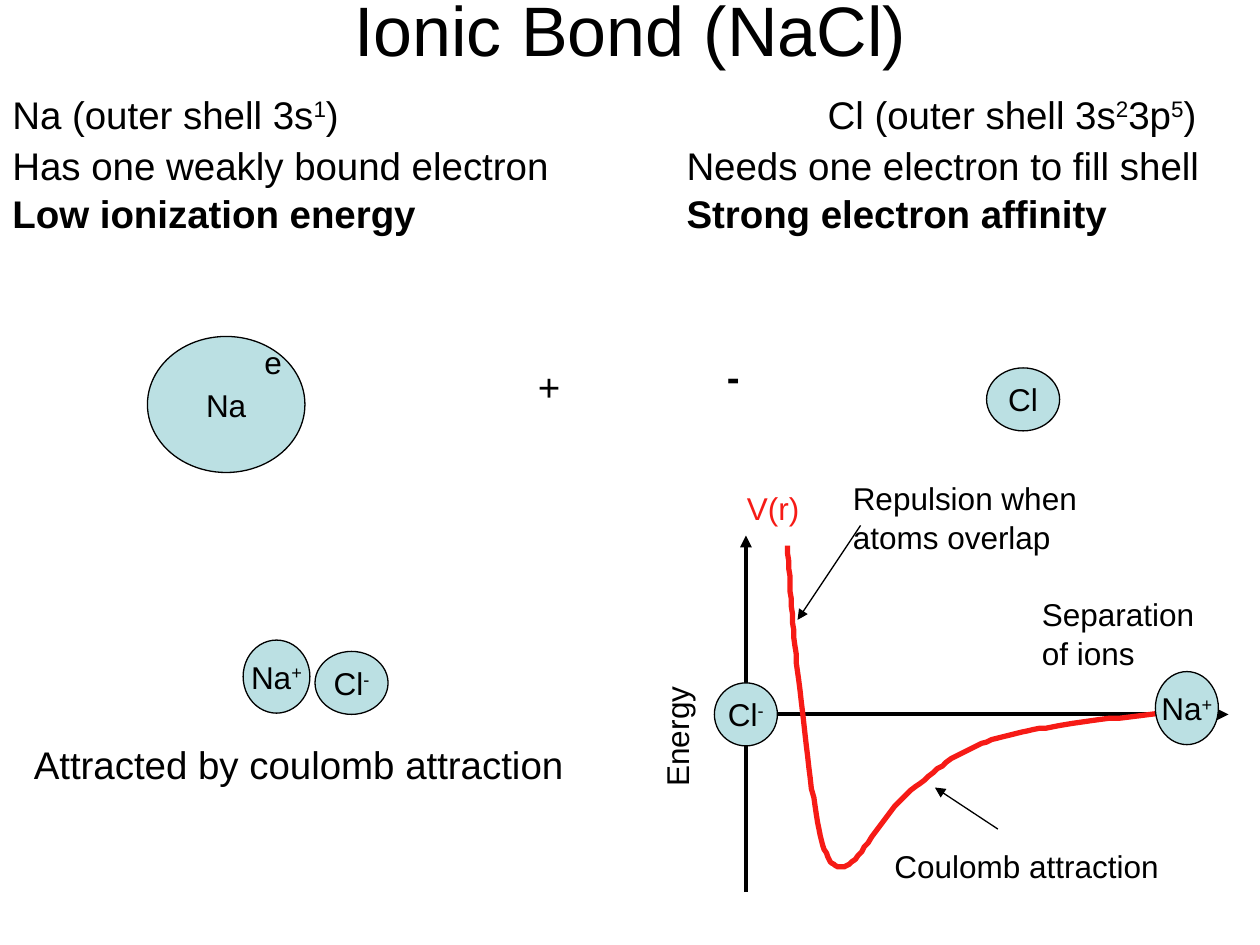
from lxml import etree
from pptx import Presentation
from pptx.dml.color import RGBColor
from pptx.enum.shapes import MSO_CONNECTOR, MSO_SHAPE
from pptx.enum.text import MSO_ANCHOR, PP_ALIGN
from pptx.oxml.ns import qn
from pptx.util import Pt

PX = 9144  # EMU per px, 100 px to the inch
STRAIGHT = MSO_CONNECTOR.STRAIGHT
OVAL = MSO_SHAPE.OVAL
LEFT, CENTER = PP_ALIGN.LEFT, PP_ALIGN.CENTER
TOP, MIDDLE = MSO_ANCHOR.TOP, MSO_ANCHOR.MIDDLE

COLORS = {"ink": "000000", "atom": "BBE0E3", "potential": "F61B16"}
RGB = {name: RGBColor.from_string(value) for name, value in COLORS.items()}
BOLD = {"Low ionization energy", "Strong electron affinity", "-"}

prs = Presentation()
prs.slide_width, prs.slide_height = 1000 * PX, 750 * PX
slide = prs.slides.add_slide(prs.slide_layouts[6])
shapes = slide.shapes


def write(frame, lines, size, color="ink", align=LEFT, anchor=TOP, wrap=True):
    """Write one paragraph per line; parts between ^ marks are superscript."""
    frame.word_wrap = wrap
    frame.vertical_anchor = anchor
    for i, line in enumerate(lines):
        paragraph = frame.paragraphs[0] if i == 0 else frame.add_paragraph()
        paragraph.alignment = align
        if i < len(lines) - 1:
            paragraph.space_after = Pt(1)
        for part, text in enumerate(line.split("^")):
            if not text:
                continue
            run = paragraph.add_run()
            run.text = text
            font_format = {"name": "Arial", "size": Pt(size), "bold": line in BOLD}
            for attribute, value in font_format.items():
                setattr(run.font, attribute, value)
            run.font.color.rgb = RGB[color]
            if part % 2:
                run._r.get_or_add_rPr().set("baseline", "30000")


def bezier(p0, p1, p2, p3, t):
    """Return the point at t on a cubic curve."""
    u = 1 - t
    return tuple(u**3 * a + 3 * u * u * t * b + 3 * u * t * t * c + t**3 * d
                 for a, b, c, d in zip(p0, p1, p2, p3))


title = shapes.add_textbox(50 * PX, 0, 900 * PX, 45 * PX)
write(title.text_frame, ["Ionic Bond (NaCl)"], 40, align=CENTER, anchor=MIDDLE)

# Axes and pointers, each with its arrowhead at the end
ARROWS = [
    ((592, 708), (592, 425), 2.25),
    ((583, 567), (975, 567), 2.25),
    ((792, 658), (742, 625), 0.75),
    ((683, 417), (633, 492), 0.75),
]
for (x1, y1), (x2, y2), width in ARROWS:
    arrow = shapes.add_connector(STRAIGHT, x1 * PX, y1 * PX, x2 * PX, y2 * PX)
    arrow.line.width = Pt(width)
    arrow.line.color.rgb = RGB["ink"]
    etree.SubElement(arrow.line._get_or_add_ln(), qn("a:tailEnd"), type="triangle")
    etree.SubElement(arrow._element.spPr, qn("a:effectLst"))

# Potential energy curve: a knot, then two controls and a knot per segment
POTENTIAL = [
    (625, 433),
    (627, 465), (629, 496), (633, 533),
    (638, 571), (644, 633), (650, 658),
    (656, 684), (661, 691), (672, 687),
    (683, 683), (699, 649), (717, 633),
    (734, 618), (753, 601), (775, 592),
    (797, 582), (815, 580), (846, 575),
    (877, 570), (935, 565), (959, 563),
]
STEPS = 16
curve_points = [bezier(*POTENTIAL[k:k + 4], step / STEPS)
                for k in range(0, len(POTENTIAL) - 1, 3)
                for step in range(1, STEPS + 1)]
builder = shapes.build_freeform(*POTENTIAL[0], scale=PX)
builder.add_line_segments(curve_points, close=False)
potential = builder.convert_to_shape()
potential.shadow.inherit = False
potential.fill.background()
potential.line.color.rgb = RGB["potential"]
potential.line.width = Pt(3)

ATOMS = [
    ("Na", 117, 267, 125, 108),
    ("Cl", 783, 292, 58, 50),
    ("Na^+", 193, 508, 53, 58),
    ("Cl^-", 250, 517, 58, 50),
    ("Na^+", 917, 533, 50, 58),
    ("Cl^-", 567, 542, 50, 50),
]
for symbol, *box in ATOMS:
    atom = shapes.add_shape(OVAL, *(v * PX for v in box))
    atom.shadow.inherit = False
    atom.fill.solid()
    atom.fill.fore_color.rgb = RGB["atom"]
    atom.line.color.rgb = RGB["ink"]
    atom.line.width = Pt(0.75)
    write(atom.text_frame, [symbol], 18, align=CENTER, anchor=MIDDLE, wrap=False)

LABELS = [
    (["Na (outer shell 3s^1^)"], 0, 67, 284, 47, 22, "ink", 0),
    (["Cl (outer shell 3s^2^3p^5^)"], 647, 67, 319, 47, 22, "ink", 0),
    (["Has one weakly bound electron", "Low ionization energy"],
     0, 108, 451, 84, 22, "ink", 0),
    (["Needs one electron to fill shell", "Strong electron affinity"],
     535, 108, 432, 84, 22, "ink", 0),
    (["Attracted by coulomb attraction"], 17, 583, 447, 47, 22, "ink", 0),
    (["e"], 200, 267, 39, 50, 18, "ink", 0),
    (["+"], 417, 283, 38, 47, 22, "ink", 0),
    (["-"], 567, 275, 30, 47, 22, "ink", 0),
    (["Energy"], 479, 546, 126, 50, 18, "ink", 270),
    (["Separation", "of ions"], 817, 467, 191, 90, 18, "ink", 0),
    (["V(r)"], 583, 383, 76, 50, 18, "potential", 0),
    (["Coulomb attraction"], 700, 667, 300, 50, 18, "ink", 0),
    (["Repulsion when", "atoms overlap"], 667, 375, 267, 90, 18, "ink", 0),
]
for lines, x, y, width, height, size, color, rotation in LABELS:
    label = shapes.add_textbox(x * PX, y * PX, width * PX, height * PX)
    label.rotation = rotation
    write(label.text_frame, lines, size, color)

prs.save("out.pptx")
